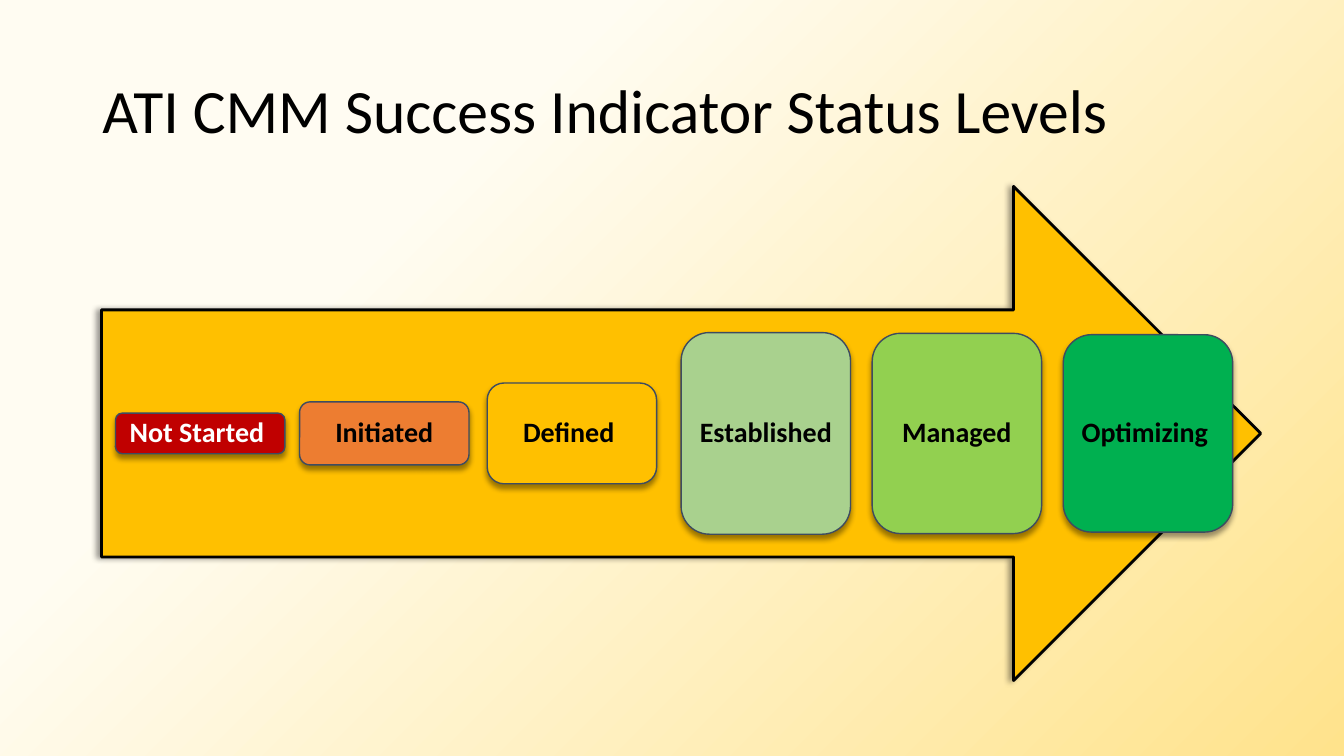
from lxml.etree import SubElement
from pptx import Presentation
from pptx.dml.color import RGBColor
from pptx.enum.shapes import MSO_SHAPE
from pptx.enum.text import MSO_ANCHOR, PP_ALIGN
from pptx.oxml.ns import qn
from pptx.util import Pt

BLACK = RGBColor(0x00, 0x00, 0x00)
WHITE = RGBColor(0xFF, 0xFF, 0xFF)
CREAM = RGBColor(0xFF, 0xFC, 0xF2)
SAND = RGBColor(0xFF, 0xE3, 0x8C)
AMBER = RGBColor(0xFF, 0xC0, 0x00)
RED = RGBColor(0xC0, 0x00, 0x00)
ORANGE = RGBColor(0xED, 0x7D, 0x31)
PALE_GREEN = RGBColor(0xA9, 0xD1, 0x8E)
LIME = RGBColor(0x92, 0xD0, 0x50)
GREEN = RGBColor(0x00, 0xB0, 0x50)
SLATE = RGBColor(0x3E, 0x4C, 0x60)

FONT = "Calibri"
TITLE = "ATI CMM Success Indicator Status Levels"
LEVELS = [
    ("Not Started ", 82.5, 29, RED, WHITE),
    ("Initiated", 214, 45, ORANGE, BLACK),
    ("Defined ", 348, 72, AMBER, BLACK),
    ("Established", 486.5, 144, PALE_GREEN, BLACK),
    ("Managed", 623, 143, LIME, BLACK),
    ("Optimizing ", 759.5, 141, GREEN, BLACK),
]
LEVEL_WIDTH = 121
MIDDLE = 309.6
ARROW_LEFT, ARROW_WIDTH, ARROW_HEIGHT = 72.5, 828, 353


def add_shadow(shape, degrees):
    shape.shadow.inherit = False
    effects = shape._element.spPr.find(qn("a:effectLst"))
    shadow = SubElement(effects, qn("a:outerShdw"), blurRad=str(Pt(4)), dist=str(Pt(3)),
                        dir=str(degrees * 60000), algn="ctr", rotWithShape="0")
    color = SubElement(shadow, qn("a:srgbClr"), val=str(BLACK))
    SubElement(color, qn("a:alpha"), val="40000")


def add_centred_shape(slide, kind, left, width, height, fill, line, line_width, shadow_degrees):
    shape = slide.shapes.add_shape(kind, Pt(left), Pt(MIDDLE - height / 2), Pt(width), Pt(height))
    shape.fill.solid()
    shape.fill.fore_color.rgb = fill
    shape.line.color.rgb = line
    shape.line.width = Pt(line_width)
    add_shadow(shape, shadow_degrees)
    return shape


def write_text(shape, text, size, color, alignment, bold):
    frame = shape.text_frame
    frame.text = text
    frame.word_wrap = True
    frame.vertical_anchor = MSO_ANCHOR.MIDDLE
    paragraph = frame.paragraphs[0]
    paragraph.alignment = alignment
    paragraph.line_spacing = 0.9
    font = paragraph.runs[0].font
    font.name = FONT
    font.size = Pt(size)
    font.bold = bold
    font.color.rgb = color


def paint_background(slide):
    fill = slide.background.fill
    fill.gradient()
    fill.gradient_angle = 315
    for stop, position, color in zip(fill.gradient_stops, (0.29, 1), (CREAM, SAND)):
        stop.position = position
        stop.color.rgb = color


def add_title(slide):
    title = slide.shapes.title
    title.left, title.top, title.width, title.height = Pt(66), Pt(28.75), Pt(828), Pt(104.4)
    write_text(title, TITLE, 44, BLACK, PP_ALIGN.LEFT, False)


def add_level(slide, name, left, height, fill, text_color):
    box = add_centred_shape(slide, MSO_SHAPE.ROUNDED_RECTANGLE, left, LEVEL_WIDTH, height,
                            fill, SLATE, 1, 90)
    frame = box.text_frame
    frame.margin_left = frame.margin_right = Pt(6)
    frame.margin_top = frame.margin_bottom = Pt(0)
    write_text(box, name, 20, text_color, PP_ALIGN.CENTER, True)


def main():
    presentation = Presentation()
    presentation.slide_width, presentation.slide_height = Pt(960), Pt(540)
    slide = presentation.slides.add_slide(presentation.slide_layouts[5])
    paint_background(slide)
    add_title(slide)
    add_centred_shape(slide, MSO_SHAPE.RIGHT_ARROW, ARROW_LEFT, ARROW_WIDTH, ARROW_HEIGHT,
                      AMBER, BLACK, 2, 180)
    for level in LEVELS:
        add_level(slide, *level)
    presentation.save("out.pptx")


if __name__ == "__main__":
    main()
